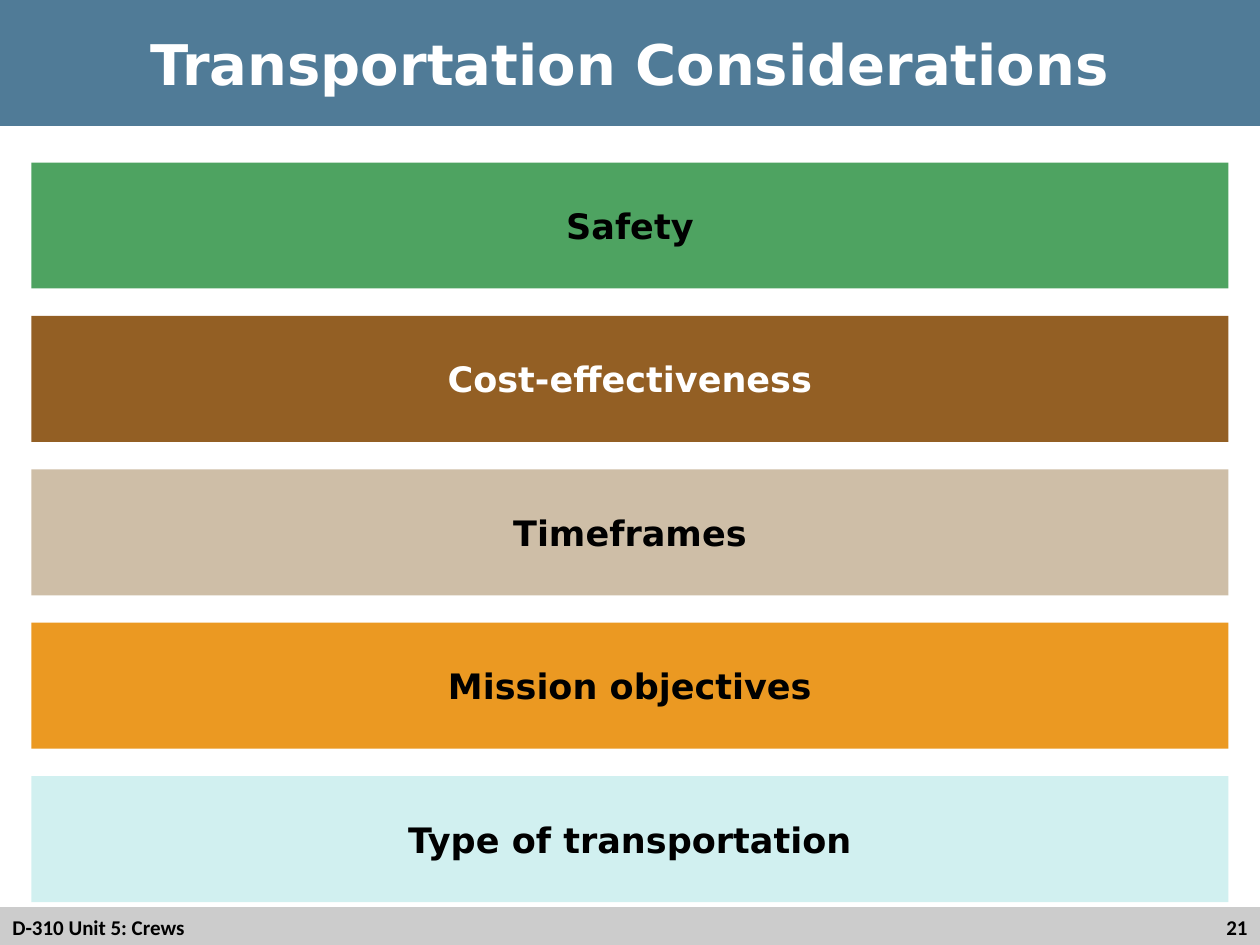
import pptx
import pptx.util
import pptx.dml.color
import pptx.enum.shapes
import pptx.enum.text

Inches = pptx.util.Inches
RGBColor = pptx.dml.color.RGBColor
ALIGN = pptx.enum.text.PP_ALIGN

BLACK = RGBColor(0x00, 0x00, 0x00)
WHITE = RGBColor(0xFF, 0xFF, 0xFF)
GREY = RGBColor(0xCC, 0xCC, 0xCC)
BLUE = RGBColor(0x50, 0x7B, 0x97)
GREEN = RGBColor(0x4E, 0xA3, 0x61)
BROWN = RGBColor(0x93, 0x5F, 0x24)
TAN = RGBColor(0xCE, 0xBE, 0xA7)
ORANGE = RGBColor(0xEB, 0x99, 0x22)
AQUA = RGBColor(0xD1, 0xF0, 0xF0)

WIDTH, HEIGHT = 10, 7.5
HEAD_FONT, FOOT_FONT = "DejaVu Sans", "Calibri"

CONSIDERATIONS = [
    ("Safety", GREEN, BLACK),
    ("Cost-effectiveness", BROWN, WHITE),
    ("Timeframes", TAN, BLACK),
    ("Mission objectives", ORANGE, BLACK),
    ("Type of transportation", AQUA, BLACK),
]


def add_band(slide, box, fill):
    """Plain filled rectangle without outline or shadow."""
    sp = slide.shapes.add_shape(
        pptx.enum.shapes.MSO_SHAPE.RECTANGLE, *map(Inches, box))
    sp.shadow.inherit = False
    sp.fill.solid()
    sp.fill.fore_color.rgb = fill
    sp.line.fill.background()
    return sp


def write(sp, text, size, font, color, align):
    """One bold, vertically centred line of text."""
    tf = sp.text_frame
    tf.word_wrap = True
    tf.vertical_anchor = pptx.enum.text.MSO_ANCHOR.MIDDLE
    p = tf.paragraphs[0]
    p.alignment = align
    r = p.add_run()
    r.text = text
    r.font.size = pptx.util.Pt(size)
    r.font.name = font
    r.font.bold = True
    r.font.color.rgb = color


def add_footer(slide, box, unit, number):
    left, top, width, height = box
    add_band(slide, box, GREY)
    split = 0.6 * width
    parts = [
        (unit, left, split, ALIGN.LEFT),
        (number, left + split, width - split, ALIGN.RIGHT),
    ]
    for text, x, w, align in parts:
        sp = slide.shapes.add_textbox(*map(Inches, (x, top, w, height)))
        write(sp, text, 12, FOOT_FONT, BLACK, align)


def add_title(slide, box, text):
    sp = add_band(slide, box, BLUE)
    write(sp, text, 32, HEAD_FONT, WHITE, ALIGN.CENTER)


def add_considerations(slide, box, items, bar_height=1):
    """Equal bars spread evenly from the top to the bottom of the box."""
    left, top, width, height = box
    pitch = (height - bar_height) / (len(items) - 1)
    for i, (text, fill, color) in enumerate(items):
        sp = add_band(slide, (left, top + i * pitch, width, bar_height), fill)
        write(sp, text, 20, HEAD_FONT, color, ALIGN.CENTER)


def main():
    prs = pptx.Presentation()
    prs.slide_width, prs.slide_height = Inches(WIDTH), Inches(HEIGHT)
    slide = prs.slides.add_slide(prs.slide_layouts[6])

    add_footer(slide, (0, 7.2, WIDTH, 0.32), "D-310 Unit 5: Crews", "21")
    add_title(slide, (0, 0, WIDTH, 1), "Transportation Considerations")
    add_considerations(slide, (0.25, 1.29, WIDTH - 0.5, 5.87), CONSIDERATIONS)

    prs.save("out.pptx")


if __name__ == "__main__":
    main()
